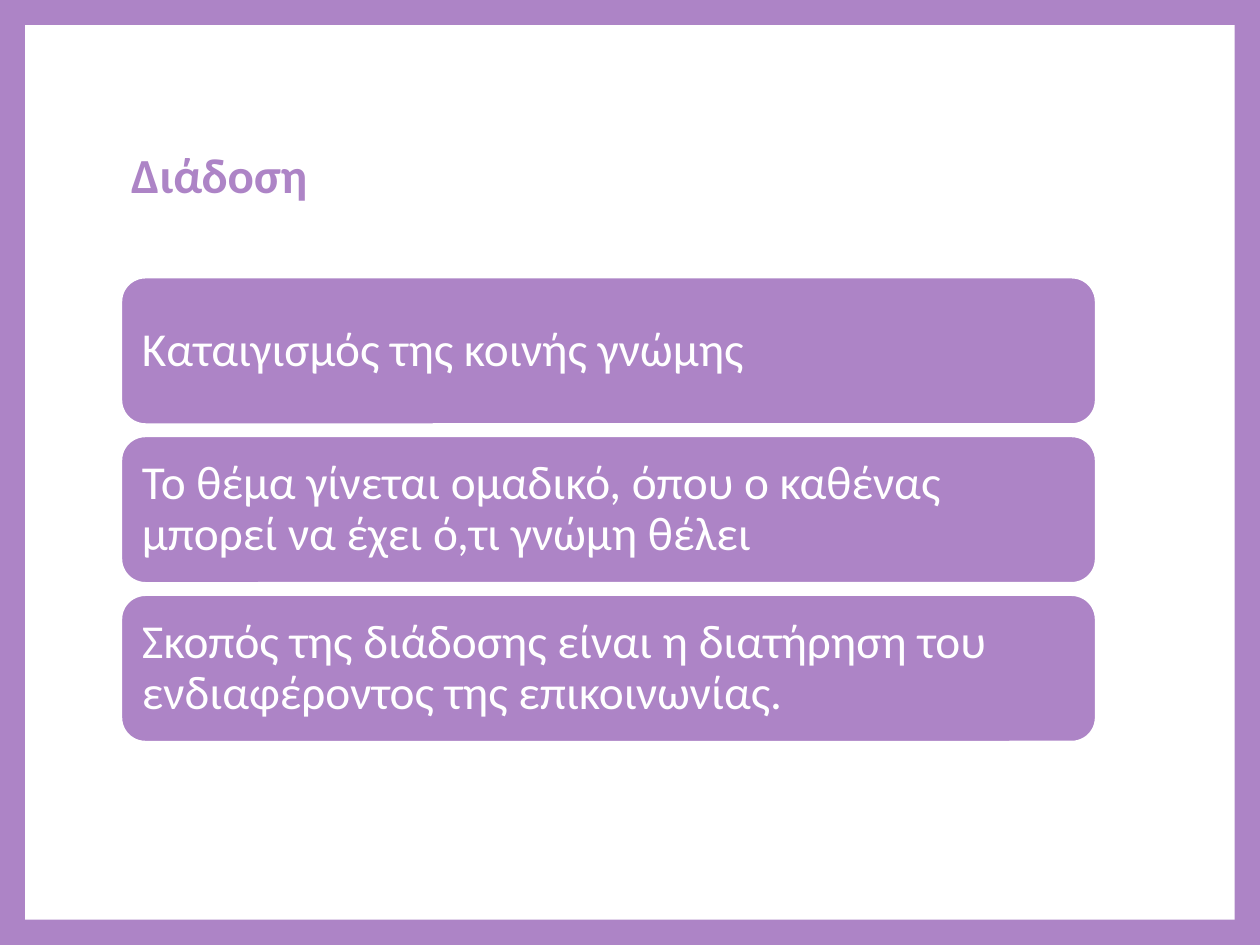
from pptx import Presentation
from pptx.dml.color import RGBColor
from pptx.enum.shapes import MSO_SHAPE
from pptx.enum.text import MSO_ANCHOR, PP_ALIGN
from pptx.util import Inches, Pt

TITLE = "Διάδοση"
STATEMENTS = [
    "Καταιγισμός της κοινής γνώμης",
    "Το θέμα γίνεται ομαδικό, όπου ο καθένας μπορεί να έχει ό,τι γνώμη θέλει",
    "Σκοπός της διάδοσης είναι η διατήρηση του ενδιαφέροντος της επικοινωνίας.",
]

THEME = {
    "purple": RGBColor(0xAD, 0x84, 0xC6),
    "white": RGBColor(0xFF, 0xFF, 0xFF),
    "font": "Calibri",
    "title_size": 28,
    "statement_size": 27,
}

SLIDE_WIDTH, SLIDE_HEIGHT = 10, 7.5
BORDER = 0.2
CARD_LEFT, CARD_TOP = 0.96, 2.2
CARD_WIDTH, CARD_HEIGHT = 7.74, 1.17
CARD_STEP = 1.26


def write_text(shape, text, size, color, bold=False, side=0.1, edge=0.05):
    frame = shape.text_frame
    frame.word_wrap = True
    frame.vertical_anchor = MSO_ANCHOR.MIDDLE
    frame.margin_left = frame.margin_right = Inches(side)
    frame.margin_top = frame.margin_bottom = Inches(edge)
    paragraph = frame.paragraphs[0]
    paragraph.alignment = PP_ALIGN.LEFT
    paragraph.line_spacing = 0.9
    run = paragraph.add_run()
    run.text = text
    run.font.name = THEME["font"]
    run.font.size = Pt(size)
    run.font.bold = bold
    run.font.color.rgb = color


def add_box(slide, kind, left, top, width, height, fill):
    shape = slide.shapes.add_shape(
        kind, Inches(left), Inches(top), Inches(width), Inches(height))
    shape.shadow.inherit = False
    shape.fill.solid()
    shape.fill.fore_color.rgb = fill
    shape.line.fill.background()
    return shape


def main():
    presentation = Presentation()
    presentation.slide_width = Inches(SLIDE_WIDTH)
    presentation.slide_height = Inches(SLIDE_HEIGHT)
    slide = presentation.slides.add_slide(presentation.slide_layouts[5])
    slide.background.fill.solid()
    slide.background.fill.fore_color.rgb = THEME["purple"]

    panel = add_box(slide, MSO_SHAPE.RECTANGLE, BORDER, BORDER,
                    SLIDE_WIDTH - 2 * BORDER, SLIDE_HEIGHT - 2 * BORDER,
                    THEME["white"])
    title = slide.shapes.title
    title._element.addprevious(panel._element)
    title.left, title.top = Inches(0.94), Inches(0.67)
    title.width, title.height = Inches(8.1), Inches(1.48)
    write_text(title, TITLE, THEME["title_size"], THEME["purple"], bold=True)

    for index, statement in enumerate(STATEMENTS):
        card = add_box(slide, MSO_SHAPE.ROUNDED_RECTANGLE, CARD_LEFT,
                       CARD_TOP + index * CARD_STEP, CARD_WIDTH, CARD_HEIGHT,
                       THEME["purple"])
        card.line.color.rgb = THEME["white"]
        card.line.width = Pt(1.5)
        write_text(card, statement, THEME["statement_size"], THEME["white"],
                   side=0.11, edge=0.11)

    presentation.save("out.pptx")


if __name__ == "__main__":
    main()
